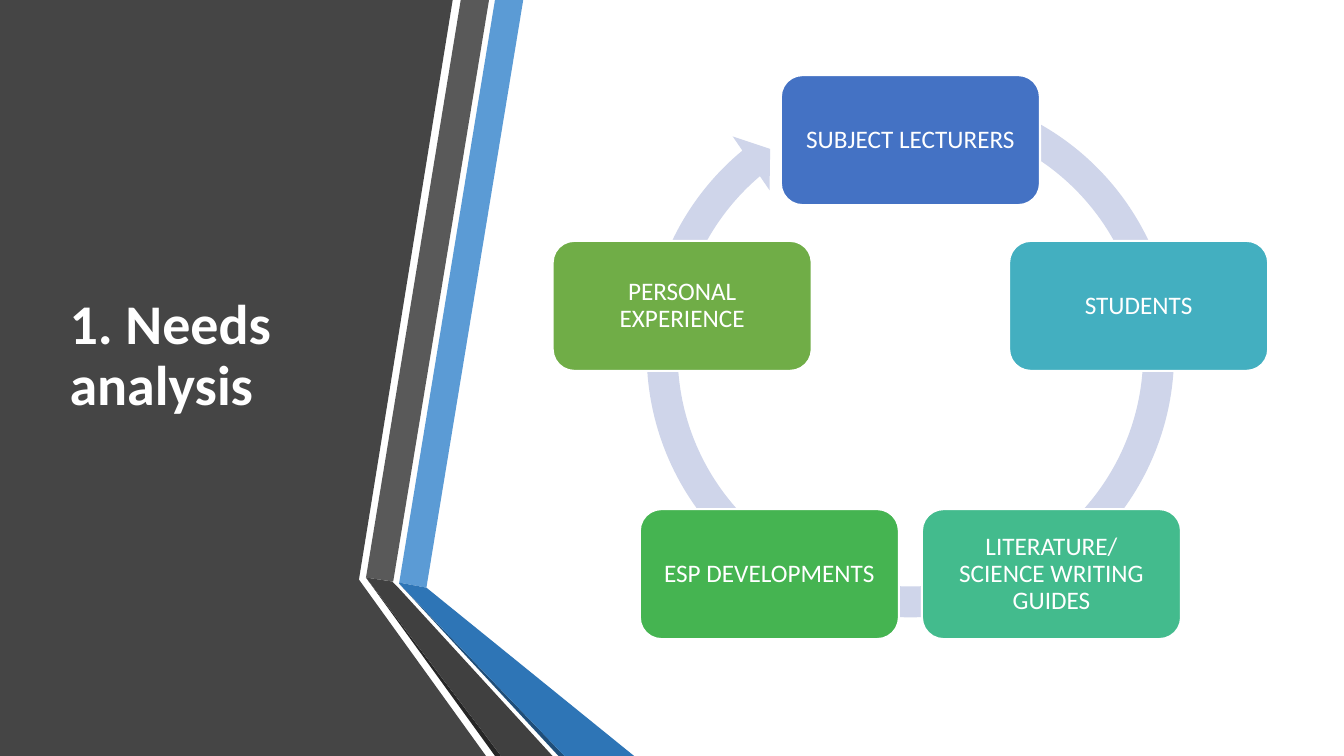
import math

from lxml import etree
from pptx import Presentation
from pptx import util as u
from pptx.dml.color import RGBColor
from pptx.enum import shapes, text


def paint(target, colour):
    """Give a fill or a line format one solid colour."""
    fill = getattr(target, "fill", target)
    fill.solid()
    fill.fore_color.rgb = RGBColor.from_string(colour)


def write(frame, wording, size=18, colour="FFFFFF", bold=False,
          align=text.PP_ALIGN.CENTER, inset=0.13):
    frame.word_wrap = True
    frame.auto_size = text.MSO_AUTO_SIZE.NONE
    frame.vertical_anchor = text.MSO_ANCHOR.MIDDLE
    frame.margin_left = frame.margin_right = u.Inches(inset)
    frame.margin_top = frame.margin_bottom = u.Inches(inset)
    para = frame.paragraphs[0]
    para.alignment = align
    para.line_spacing = 0.9
    span = para.add_run()
    span.text = wording
    span.font.name = "Calibri"
    span.font.size = u.Pt(size)
    span.font.bold = bold
    span.font.color.rgb = RGBColor.from_string(colour)


class Sheet:
    """The current slide and the style of its elements."""
    outline = "FFFFFF"
    outline_width = 1.5

    def __init__(self, deck):
        self.page = deck.slides.add_slide(deck.slide_layouts[5])

    def title(self, wording, left, top, width, height):
        box = self.page.shapes.title
        box.left, box.top = u.Inches(left), u.Inches(top)
        box.width, box.height = u.Inches(width), u.Inches(height)
        write(box.text_frame, wording, size=40, bold=True,
              align=text.PP_ALIGN.LEFT, inset=0.1)

    def polygon(self, points, colour):
        corners = [(u.Inches(x), u.Inches(y)) for x, y in points]
        builder = self.page.shapes.build_freeform(*corners[0])
        builder.add_line_segments(corners[1:], close=True)
        band = builder.convert_to_shape()
        band.shadow.inherit = False
        paint(band, colour)
        band.line.fill.background()

    def preset(self, kind, centre, size, colour):
        (x, y), (width, height) = centre, size
        shape = self.page.shapes.add_shape(
            kind, u.Inches(x - width / 2), u.Inches(y - height / 2),
            u.Inches(width), u.Inches(height))
        shape.shadow.inherit = False
        paint(shape, colour)
        shape.line.fill.background()
        return shape

    def ring(self, centre, diameter, colour, adjustments):
        arrow = self.preset(shapes.MSO_SHAPE.CIRCULAR_ARROW, centre,
                            (diameter, diameter), colour)
        for index, value in enumerate(adjustments):
            arrow.adjustments[index] = value

    def node(self, wording, centre, size, colour):
        card = self.preset(shapes.MSO_SHAPE.ROUNDED_RECTANGLE, centre,
                           size, colour)
        paint(card.line, self.outline)
        card.line.width = u.Pt(self.outline_width)
        write(card.text_frame, wording)


# Left panel and folded ribbons, from back to front
BANDS = [
    ("454545", [(0, 0), (4.49, 0), (3.56, 5.75), (4.82, 7.5), (0, 7.5)]),
    ("5B9BD5", [(3.96, 5.78), (4.23, 5.83), (5.19, 0), (4.91, 0)]),
    ("595959", [(4.85, 0), (4.57, 0), (3.63, 5.73), (3.9, 5.77)]),
    ("262626", [(3.63, 5.73), (4.91, 7.5), (4.97, 7.5)]),
    ("1F4E79", [(3.96, 5.79), (5.54, 7.5), (5.6, 7.5)]),
    ("2E75B6", [(3.96, 5.78), (3.96, 5.79), (5.6, 7.5), (6.29, 7.5),
                (4.23, 5.83)]),
    ("404040", [(5.48, 7.5), (3.95, 5.83), (3.89, 5.77), (3.63, 5.73),
                (4.97, 7.5)]),
]

# Cycle nodes, clockwise from the top
SOURCES = [
    ("SUBJECT LECTURERS", "4472C4"),
    ("STUDENTS", "43AFC0"),
    ("LITERATURE/ SCIENCE WRITING GUIDES", "43BB8D"),
    ("ESP DEVELOPMENTS", "45B451"),
    ("PERSONAL EXPERIENCE", "70AD47"),
]
CENTRE_X, CENTRE_Y, RADIUS = 9.03, 3.77, 2.38


def main():
    deck = Presentation()
    deck.slide_width, deck.slide_height = u.Inches(13.33), u.Inches(7.5)
    sheet = Sheet(deck)

    # Panel and title
    for colour, points in BANDS:
        sheet.polygon(points, colour)
    sheet.title("1. Needs analysis", 0.59, 0.75, 3.04, 5.58)
    tree = sheet.page.shapes.title.element.getparent()
    tree.append(sheet.page.shapes.title.element)  # title above the panel

    # Cycle
    sheet.ring((CENTRE_X, 3.51), 5.57, "CFD5EA",
               (0.055, 3.307, 138.056, 173.679, 0.058))
    for index, (wording, colour) in enumerate(SOURCES):
        angle = math.tau * index / len(SOURCES)
        centre = (CENTRE_X + RADIUS * math.sin(angle),
                  CENTRE_Y - RADIUS * math.cos(angle))
        sheet.node(wording, centre, (2.57, 1.29), colour)

    deck.save("out.pptx")


if __name__ == "__main__":
    main()
